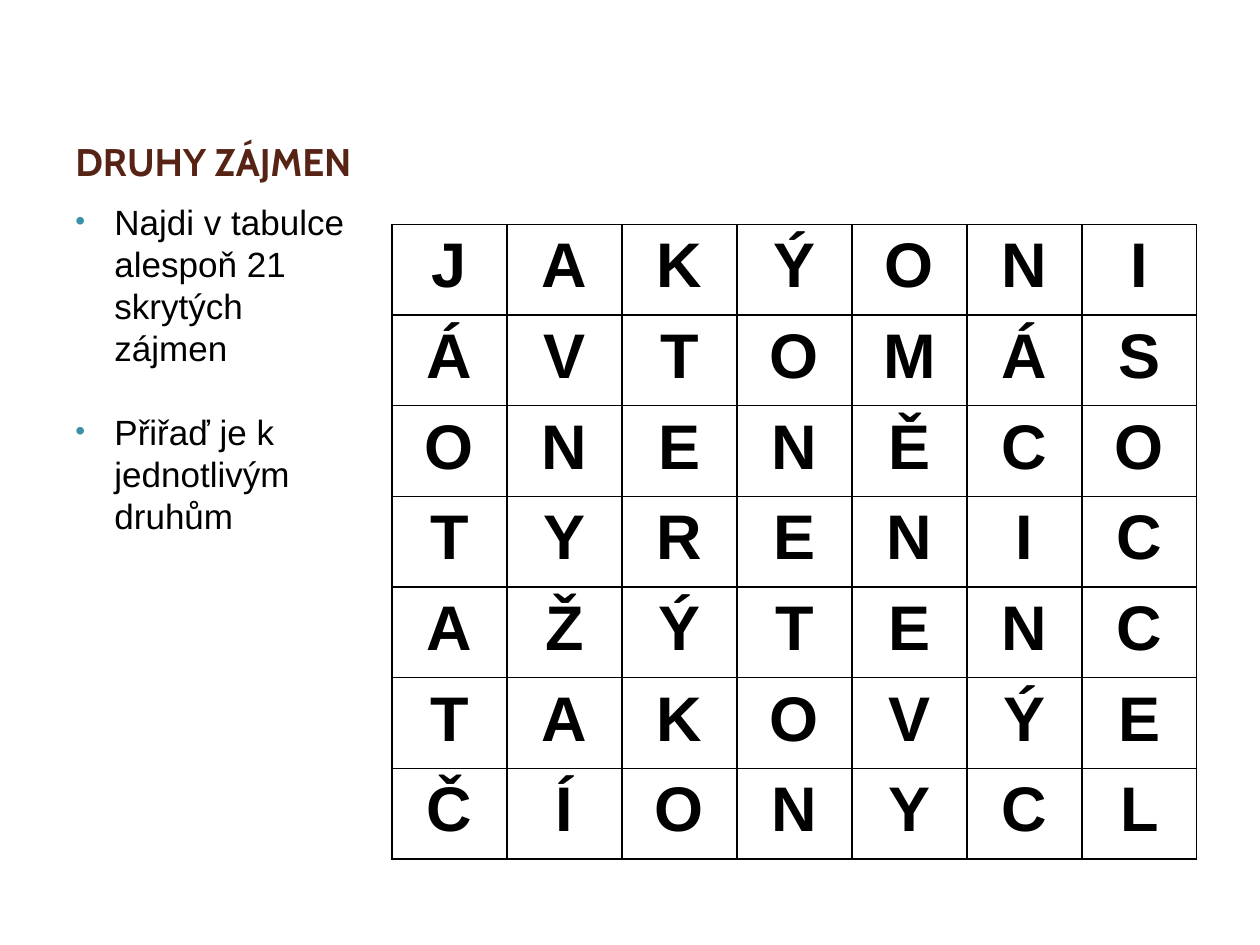
from lxml.etree import SubElement
from pptx import Presentation
from pptx.dml.color import RGBColor
from pptx.enum.text import MSO_ANCHOR, PP_ALIGN
from pptx.oxml.ns import qn
from pptx.util import Inches, Pt

BLACK = RGBColor(0x00, 0x00, 0x00)
BROWN = RGBColor(0x57, 0x23, 0x14)
TEAL = RGBColor(0x38, 0x91, 0xA7)

TITLE = "DRUHY ZÁJMEN"
TASKS = [
    "Najdi v tabulce alespoň 21 skrytých zájmen",
    "Přiřaď je k jednotlivým druhům",
]
LETTERS = ["JAKÝONI", "ÁVTOMÁS", "ONENĚCO", "TYRENIC", "AŽÝTENC", "TAKOVÝE", "ČÍONYCL"]


def style_text(para, font_name, size, color, bold=False):
    for span in para.runs:
        font = span.font
        font.name = font_name
        font.size = Pt(size)
        font.color.rgb = color
        font.bold = bold


def add_text_box(slide, left, top, width, height, anchor):
    box = slide.shapes.add_textbox(Inches(left), Inches(top), Inches(width), Inches(height))
    frame = box.text_frame
    frame.word_wrap = True
    frame.vertical_anchor = anchor
    return frame


def add_title(slide):
    frame = add_text_box(slide, 0.5, 0.24, 4.17, 1.27, MSO_ANCHOR.BOTTOM)
    frame.text = TITLE
    para = frame.paragraphs[0]
    para.line_spacing = Pt(20)
    style_text(para, "Cabin", 22, BROWN, bold=True)


def set_bullet(para):
    properties = para._p.get_or_add_pPr()
    properties.set("marL", str(Inches(0.31)))
    properties.set("indent", str(-Inches(0.31)))
    color = SubElement(properties, qn("a:buClr"))
    SubElement(color, qn("a:srgbClr"), val=str(TEAL))
    SubElement(properties, qn("a:buSzPct"), val="80000")
    SubElement(properties, qn("a:buFont"), typeface="Arial")
    SubElement(properties, qn("a:buChar"), char="•")


def add_tasks(slide):
    frame = add_text_box(slide, 0.5, 1.54, 2.37, 5.28, MSO_ANCHOR.TOP)
    frame.text = "\n".join(TASKS)
    for index, para in enumerate(frame.paragraphs):
        para.line_spacing = Pt(24)
        para.space_before = Pt(24 if index else 0)
        set_bullet(para)
        style_text(para, "Arial", 20, BLACK)


def set_borders(cell):
    properties = cell._tc.get_or_add_tcPr()
    for position, side in enumerate(("a:lnL", "a:lnR", "a:lnT", "a:lnB")):
        line = properties.makeelement(qn(side), {"w": str(Pt(1))})
        fill = SubElement(line, qn("a:solidFill"))
        SubElement(fill, qn("a:srgbClr"), val=str(BLACK))
        properties.insert(position, line)


def add_letter_grid(slide):
    width, height = Inches(6.39), Inches(5.04)
    row_count, column_count = len(LETTERS), len(LETTERS[0])
    table = slide.shapes.add_table(
        row_count, column_count, Inches(3.11), Inches(1.78), width, height
    ).table
    table.first_row = False
    table.horz_banding = False
    for row_index, word in enumerate(LETTERS):
        for column_index, letter in enumerate(word):
            cell = table.cell(row_index, column_index)
            cell.text = letter
            cell.fill.background()
            set_borders(cell)
            para = cell.text_frame.paragraphs[0]
            para.alignment = PP_ALIGN.CENTER
            style_text(para, "Arial", 36, BLACK, bold=True)


def main():
    deck = Presentation()
    deck.slide_width = Inches(10)
    deck.slide_height = Inches(7.5)
    page = deck.slides.add_slide(deck.slide_layouts[6])

    # Heading and instructions
    add_title(page)
    add_tasks(page)

    # Word search
    add_letter_grid(page)

    deck.save("out.pptx")


if __name__ == "__main__":
    main()
